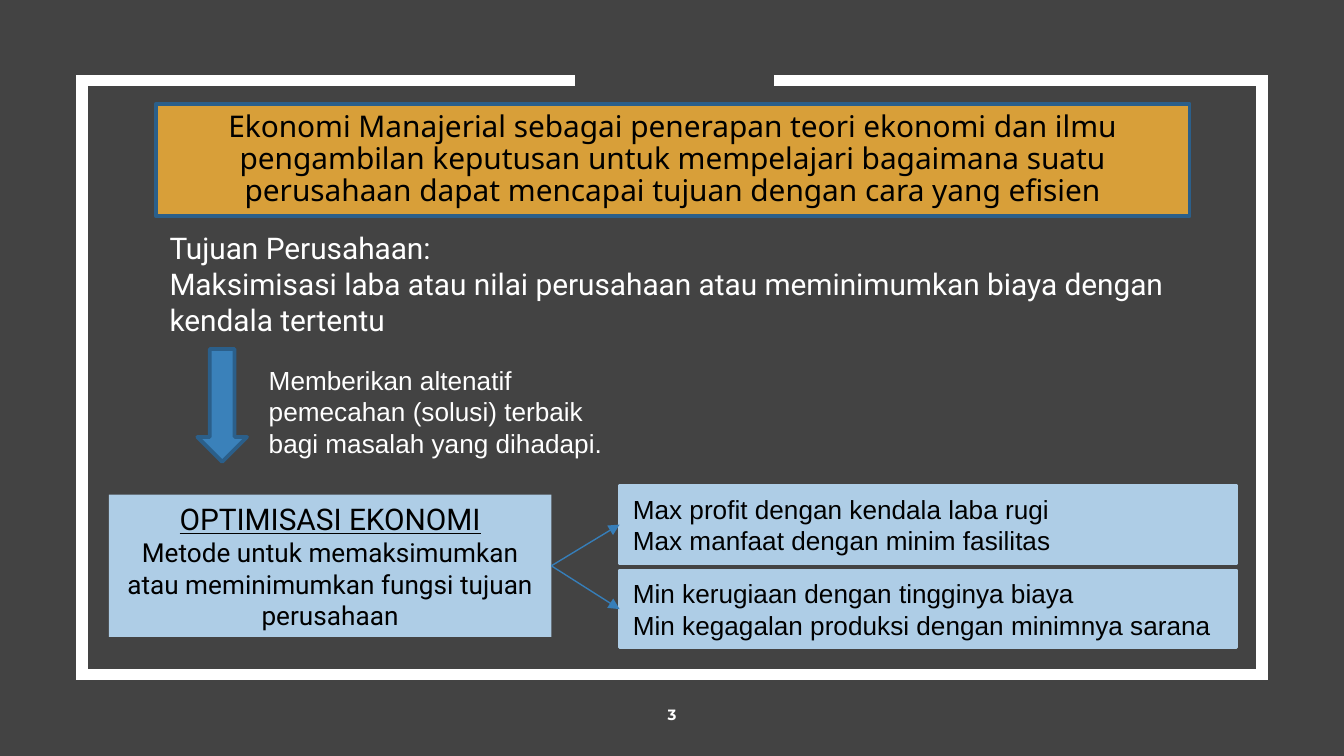
from pptx import Presentation
from pptx.dml.color import RGBColor
from pptx.enum.shapes import MSO_CONNECTOR, MSO_SHAPE
from pptx.enum.text import MSO_ANCHOR, MSO_AUTO_SIZE, PP_ALIGN
from pptx.oxml.ns import qn
from pptx.util import Cm, Pt
from lxml.etree import SubElement

COLORS = {
    "background": "434343",
    "white": "FFFFFF",
    "black": "000000",
    "gold": "D89F39",
    "blue": "3A81BA",
    "navy": "2B5F8A",
    "pale": "AECDE6",
    "link": "367EB9",
}


def rgb(name):
    return RGBColor.from_string(COLORS[name])


def place(shape, left, top, width, height):
    shape.left, shape.top = Cm(left), Cm(top)
    shape.width, shape.height = Cm(width), Cm(height)


def paint(shape, fill, line=None):
    shape.fill.solid()
    shape.fill.fore_color.rgb = rgb(fill)
    if line:
        shape.line.color.rgb = rgb(line)
        shape.line.width = Pt(2)
    else:
        shape.line.fill.background()


def write(shape, lines, font, size, color, align=PP_ALIGN.LEFT, anchor=MSO_ANCHOR.MIDDLE):
    """Fill a shape with one paragraph per line and return the paragraphs."""
    tf = shape.text_frame
    tf.word_wrap = True
    tf.auto_size = MSO_AUTO_SIZE.NONE
    tf.vertical_anchor = anchor
    tf.text = "\n".join(lines)
    for p in tf.paragraphs:
        p.alignment = align
        p.space_before = Pt(0)
        p.font.name, p.font.size = font, Pt(size)
        p.font.color.rgb = rgb(color)
    return tf.paragraphs


def add_box(s, kind, box, fill, line=None):
    sp = s.shapes.add_shape(kind, *map(Cm, box))
    sp.shadow.inherit = False
    paint(sp, fill, line)
    return sp


def add_text(s, box, lines, font, size, **options):
    sp = s.shapes.add_textbox(*map(Cm, box))
    return write(sp, lines, font, size, "white", **options)


def add_frame(s):
    """Draw the white border, open at the top."""
    left, top, right, bottom = 1.55, 1.52, 23.85, 12.75
    points = [(left, top), (left, bottom), (right, bottom), (right, top), (14.63, top)]
    builder = s.shapes.build_freeform(Cm(10.87), Cm(top))
    builder.add_line_segments([(Cm(x), Cm(y)) for x, y in points], close=False)
    frame = builder.convert_to_shape()
    frame.shadow.inherit = False
    frame.fill.background()
    frame.line.color.rgb = rgb("white")
    frame.line.width = Pt(6)
    SubElement(frame.line._get_or_add_ln(), qn("a:miter"), lim="800000")


def add_arrow(s, source, target):
    """Join the right side of source to the left side of target."""
    c = s.shapes.add_connector(MSO_CONNECTOR.STRAIGHT, 0, 0, 0, 0)
    c.begin_connect(source, 3)
    c.end_connect(target, 1)
    c.line.color.rgb = rgb("link")
    c.line.width = Pt(0.75)
    SubElement(c.line._get_or_add_ln(), qn("a:tailEnd"), type="triangle")
    SubElement(c._element.spPr, qn("a:effectLst"))


def add_title(s):
    title = s.shapes.title
    place(title, 2.95, 1.96, 19.53, 2.13)
    paint(title, "gold", "navy")
    text = ("Ekonomi Manajerial sebagai penerapan teori ekonomi dan ilmu "
            "pengambilan keputusan untuk mempelajari bagaimana suatu "
            "perusahaan dapat mencapai tujuan dengan cara yang efisien")
    p, = write(title, [text], "Noto Sans", 16, "black", PP_ALIGN.CENTER)
    p.line_spacing = 0.9


def add_goal(s):
    body = s.placeholders[1]
    place(body, 2.95, 4.01, 20.09, 2.69)
    lines = ["Tujuan Perusahaan:",
             "Maksimisasi laba atau nilai perusahaan atau meminimumkan biaya "
             "dengan kendala tertentu"]
    body.text_frame.text = "\n".join(lines)
    for p in write(body, lines, "Roboto", 16, "white"):
        pPr = p._p.get_or_add_pPr()
        pPr.set("marL", "0")
        pPr.set("indent", "0")
        pPr.insert_element_before(
            pPr.makeelement(qn("a:buNone")), "a:tabLst", "a:defRPr", "a:extLst")


def add_method(s):
    method = add_box(s, MSO_SHAPE.RECTANGLE, (2.06, 9.35, 8.36, 2.69), "pale")
    lines = ["OPTIMISASI EKONOMI",
             "Metode untuk memaksimumkan atau meminimumkan fungsi tujuan perusahaan"]
    heading, _ = write(method, lines, "Roboto", 14, "black", PP_ALIGN.CENTER)
    heading.font.size = Pt(16)
    heading.font.underline = True
    return method


def main():
    prs = Presentation()
    prs.slide_width, prs.slide_height = Cm(25.4), Cm(14.29)
    s = prs.slides.add_slide(prs.slide_layouts[1])
    s.background.fill.solid()
    s.background.fill.fore_color.rgb = rgb("background")

    # Frame and page number
    add_frame(s)
    number, = add_text(s, (0, 12.75, 25.4, 1.52), ["3"], "Montserrat", 8,
                       align=PP_ALIGN.CENTER)
    number.font.bold = True

    # Definition and company goal
    add_title(s)
    add_goal(s)

    # Step down to the method
    add_text(s, (4.83, 6.76, 6.88, 2.06),
             ["Memberikan altenatif pemecahan (solusi) terbaik bagi masalah yang dihadapi."],
             "Arial", 14, anchor=MSO_ANCHOR.TOP)
    add_box(s, MSO_SHAPE.DOWN_ARROW, (3.73, 6.6, 0.94, 2.13), "blue", "navy")
    method = add_method(s)

    # Two outcomes, each linked to the method
    outcomes = [
        ["Max profit dengan kendala laba rugi", "Max manfaat dengan minim fasilitas"],
        ["Min kerugiaan dengan tingginya biaya",
         "Min kegagalan produksi dengan minimnya sarana"],
    ]
    for i, lines in enumerate(outcomes):
        outcome = add_box(s, MSO_SHAPE.RECTANGLE, (11.71, 9.19 + 1.6 * i, 11.66, 1.45),
                          "pale", "pale")
        write(outcome, lines, "Arial", 14, "black")
        add_arrow(s, method, outcome)

    prs.save("out.pptx")


if __name__ == "__main__":
    main()
